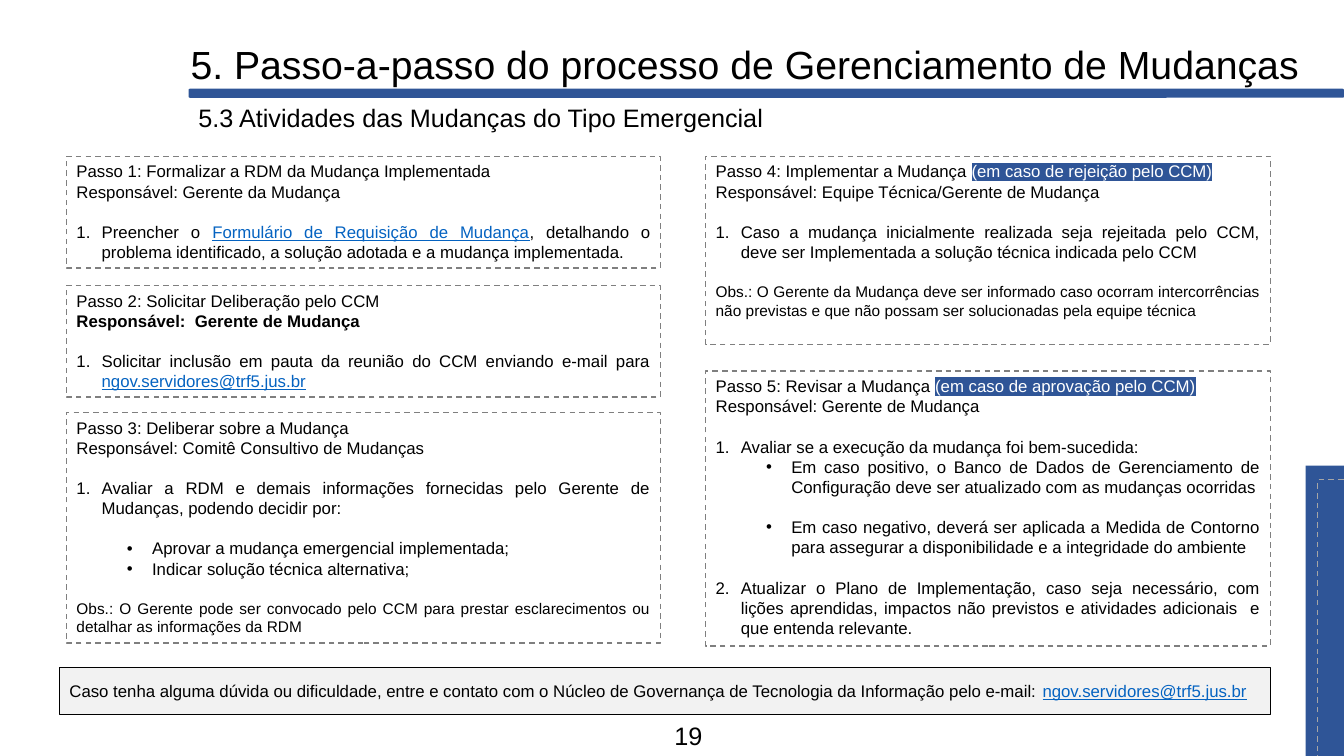
from lxml.etree import SubElement
from pptx import Presentation
from pptx.dml.color import RGBColor
from pptx.enum.dml import MSO_LINE
from pptx.enum.shapes import MSO_SHAPE
from pptx.enum.text import MSO_ANCHOR, PP_ALIGN
from pptx.oxml.ns import qn
from pptx.util import Inches, Pt

NAVY, BLACK, GREY = "2F5597", "000000", "7F7F7F"
MAIL = ("ngov.servidores@trf5.jus.br", "link")
LOOKS = {
    "plain": {},
    "bold": {"bold": True},
    "note": {"size": Pt(11)},
    "link": {"underline": True},
    "mark": {},
}
INKS = {"link": "0563C1", "mark": "FFFFFF"}
LISTS = {
    "num": (0, 0.25, "buAutoNum", {"type": "arabicPeriod"}),
    "dot": (1, 0.75, "buChar", {"char": "•"}),
}
LEFT, RIGHT = (0.66, 5.89), (7, 5.6)

STEPS = [
    (LEFT, 1.55, 1.11, [
        ("", 0, "Passo 1: Formalizar a RDM da Mudança Implementada"),
        ("", 0, "Responsável: Gerente da Mudança"),
        ("num", 1, "Preencher o ", ("Formulário de Requisição de Mudança", "link"),
         ", detalhando o problema identificado, a solução adotada e a mudança implementada."),
    ]),
    (LEFT, 2.83, 1.11, [
        ("", 0, "Passo 2: Solicitar Deliberação pelo CCM"),
        ("", 0, ("Responsável:  Gerente de Mudança", "bold")),
        ("num", 1, "Solicitar inclusão em pauta da reunião do CCM enviando e-mail para ", MAIL),
    ]),
    (LEFT, 4.09, 2.29, [
        ("", 0, "Passo 3: Deliberar sobre a Mudança"),
        ("", 0, "Responsável: Comitê Consultivo de Mudanças"),
        ("num", 1, "Avaliar a RDM e demais informações fornecidas pelo Gerente de Mudanças, "
         "podendo decidir por:"),
        ("dot", 1, "Aprovar a mudança emergencial implementada;"),
        ("dot", 0, "Indicar solução técnica alternativa;"),
        ("", 1, ("Obs.: O Gerente pode ser convocado pelo CCM para prestar esclarecimentos "
                 "ou detalhar as informações da RDM", "note")),
    ]),
    (RIGHT, 1.55, 1.87, [
        ("", 0, "Passo 4: Implementar a Mudança ", ("(em caso de rejeição pelo CCM)", "mark")),
        ("", 0, "Responsável: Equipe Técnica/Gerente de Mudança"),
        ("num", 1, "Caso a mudança inicialmente realizada seja rejeitada pelo CCM, "
         "deve ser Implementada a solução técnica indicada pelo CCM"),
        ("", 1, ("Obs.: O Gerente da Mudança deve ser informado caso ocorram intercorrências "
                 "não previstas e que não possam ser solucionadas pela equipe técnica", "note")),
    ]),
    (RIGHT, 3.68, 2.73, [
        ("", 0, "Passo 5: Revisar a Mudança ", ("(em caso de aprovação pelo CCM)", "mark")),
        ("", 0, "Responsável: Gerente de Mudança"),
        ("num", 1, "Avaliar se a execução da mudança foi bem-sucedida:"),
        ("dot", 0, "Em caso positivo, o Banco de Dados de Gerenciamento de Configuração "
         "deve ser atualizado com as mudanças ocorridas"),
        ("dot", 1, "Em caso negativo, deverá ser aplicada a Medida de Contorno "
         "para assegurar a disponibilidade e a integridade do ambiente"),
        ("num", 1, "Atualizar o Plano de Implementação, caso seja necessário, com lições "
         "aprendidas, impactos não previstos e atividades adicionais  e que entenda relevante."),
    ]),
]
HELP = [("", 0, "Caso tenha alguma dúvida ou dificuldade, entre e contato com o Núcleo de "
         "Governança de Tecnologia da Informação pelo e-mail: ", MAIL)]


def tint(color, code):
    """Apply a hex colour to a colour format."""
    color.rgb = RGBColor.from_string(code)


def apply(item, values):
    """Set each named value on an item."""
    for name, value in values.items():
        setattr(item, name, value)


class Deck:
    """Hold the style and the current slide."""

    def __init__(self):
        """Open a wide deck with one titled slide."""
        self.font, self.size, self.gap = "Arial", Pt(12), Pt(14.4)
        self.deck = Presentation()
        apply(self.deck, {"slide_width": Inches(13.33), "slide_height": Inches(7.5)})
        self.slide = self.deck.slides.add_slide(self.deck.slide_layouts[5])

    def box(self, area, fill=None, line=None, width=1, dash=True, kind=MSO_SHAPE.RECTANGLE):
        """Add a shape with an optional fill and outline."""
        shape = self.slide.shapes.add_shape(kind, *map(Inches, area))
        shape.shadow.inherit = False
        if fill:
            shape.fill.solid()
            tint(shape.fill.fore_color, fill)
        else:
            shape.fill.background()
        if line:
            tint(shape.line.color, line)
            shape.line.width = Pt(width)
            if dash:
                shape.line.dash_style = MSO_LINE.DASH
        else:
            shape.line.fill.background()
        return shape

    def run(self, para, text, look="plain", size=None):
        """Add a styled run to a paragraph."""
        run = para.add_run()
        run.text = text
        apply(run.font, {"size": size or self.size, "name": self.font, **LOOKS[look]})
        tint(run.font.color, INKS.get(look, BLACK))
        if look == "mark":
            props = run._r.get_or_add_rPr()
            mark = SubElement(props, qn("a:highlight"))
            SubElement(mark, qn("a:srgbClr"), val=NAVY)
            props.find(qn("a:solidFill")).addnext(mark)

    def prose(self, shape, lines, anchor=MSO_ANCHOR.TOP):
        """Fill a shape with justified paragraphs and lists."""
        frame = shape.text_frame
        apply(frame, {"word_wrap": True, "vertical_anchor": anchor})
        for i, (kind, gap, *runs) in enumerate(lines):
            para = frame.add_paragraph() if i else frame.paragraphs[0]
            apply(para, {"alignment": PP_ALIGN.JUSTIFY, "space_before": self.gap * gap})
            if kind:
                para.level, left, tag, values = LISTS[kind]
                props = para._p.get_or_add_pPr()
                props.set("marL", str(Inches(left)))
                props.set("indent", str(Inches(-0.25)))
                SubElement(props, qn("a:buFont"), typeface=self.font)
                SubElement(props, qn("a:" + tag), **values)
            for part in runs:
                self.run(para, *([part] if isinstance(part, str) else part))

    def label(self, shape, text, size, space=1.0, anchor=MSO_ANCHOR.MIDDLE):
        """Put one left-aligned line into a text holder."""
        frame = shape.text_frame
        apply(frame, {"word_wrap": True, "vertical_anchor": anchor})
        para = frame.paragraphs[0]
        apply(para, {"alignment": PP_ALIGN.LEFT, "line_spacing": space})
        self.run(para, text, size=Pt(size))

    def title(self, area, text):
        """Place and format the slide title."""
        head = self.slide.shapes.title
        apply(head, dict(zip(("left", "top", "width", "height"), map(Inches, area))))
        self.label(head, text, 28, 0.9)

    def text(self, area, *words, **style):
        """Add a text box with one line."""
        self.label(self.slide.shapes.add_textbox(*map(Inches, area)), *words, **style)


def main():
    """Build and save the slide."""
    deck = Deck()
    deck.box((1.87, 0.88, 11.46, 0.09), NAVY, kind=MSO_SHAPE.ROUNDED_RECTANGLE)
    deck.title((1.79, 0.14, 11.66, 1.04),
               "5. Passo-a-passo do processo de Gerenciamento de Mudanças")
    deck.box((12.95, 4.62, 0.38, 2.89), NAVY)
    deck.box((13.07, 4.76, 0.38, 2.89), line="A6A6A6")
    deck.text((1.87, 0.92, 11.66, 0.52),
              "5.3 Atividades das Mudanças do Tipo Emergencial", 18, 0.9)
    for (left, width), top, height, lines in STEPS:
        deck.prose(deck.box((left, top, width, height), line=GREY), lines)
    foot = deck.box((0.59, 6.62, 12.01, 0.47), "D0CECE", BLACK, 0.5, False)
    shade = foot._element.spPr.find(qn("a:solidFill"))[0]
    SubElement(shade, qn("a:alpha"), val="26000")
    deck.prose(foot, HELP, MSO_ANCHOR.MIDDLE)
    deck.text((6.59, 7.1, 0.49, 0.4), "19", 18, anchor=MSO_ANCHOR.TOP)
    deck.deck.save("out.pptx")


if __name__ == "__main__":
    main()
